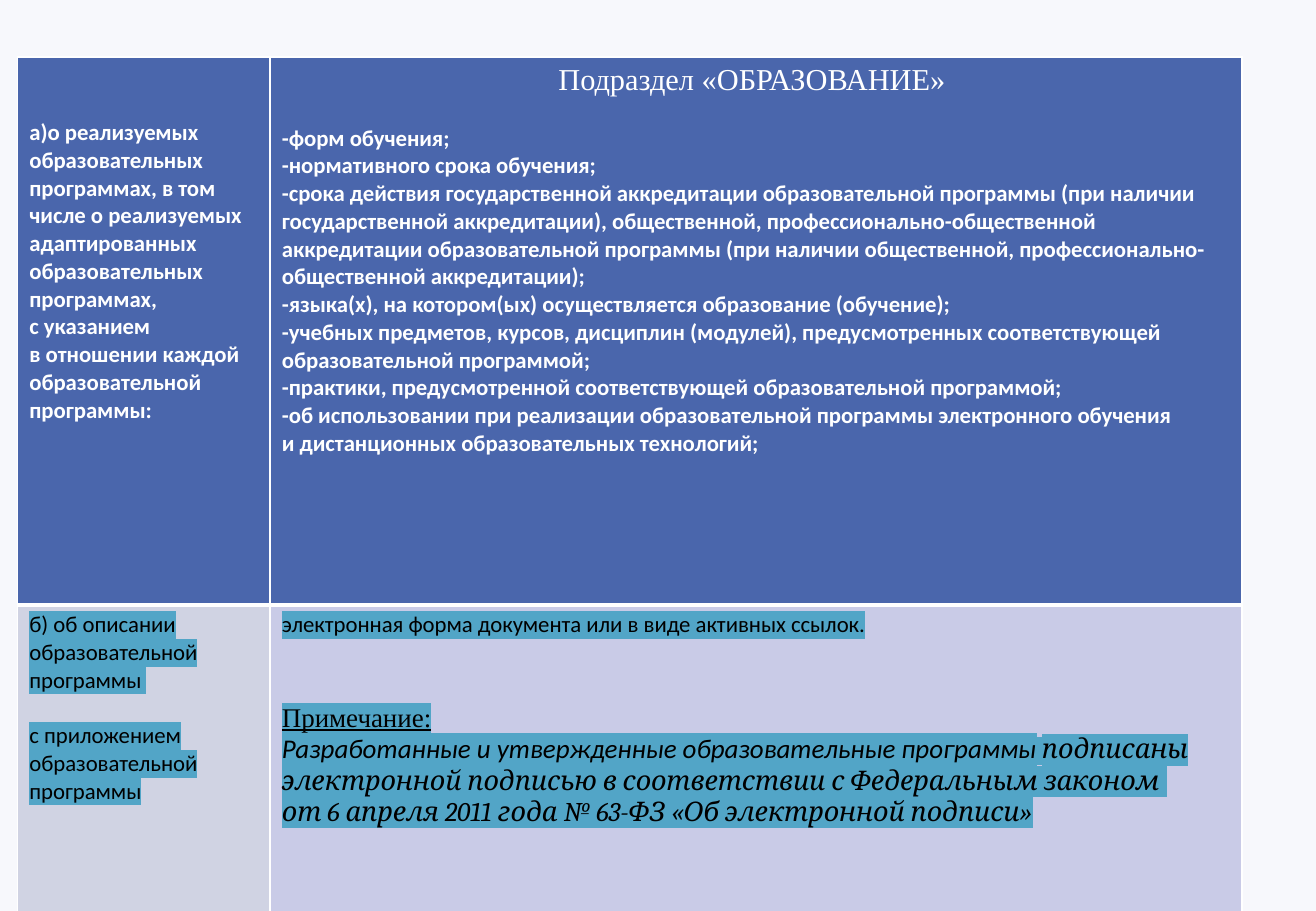
"""Build the slide with the table on the education subsection."""
from copy import deepcopy
from dataclasses import dataclass, field

from lxml import etree
from pptx import Presentation
from pptx import util as u
from pptx.dml import color as dml
from pptx.enum import text as t
from pptx.oxml import ns

WHITE, BLACK, HEADER_BLUE, HIGHLIGHT = "FFFFFF", "000000", "4A66AC", "52A5C7"
COLUMN_WIDTHS = (5.28, 20.32)
ROW_HEIGHTS = (11.46, 7.32)


@dataclass
class Run:
    text: str
    format: dict = field(default_factory=dict)


@dataclass
class Paragraph:
    runs: list[Run]
    space_before: float = 0
    centred: bool = False


@dataclass
class Cell:
    row: int
    column: int
    fill: str
    paragraphs: list[Paragraph]
    text_format: dict
    bottom_border: float = 1
    top_margin: float = 0.13


HEADER_FORMAT = {"color": WHITE, "bold": True}
BODY_FORMAT = {"color": BLACK, "highlight": HIGHLIGHT}

EDUCATION_ITEMS = [
    "-форм обучения;",
    "-нормативного срока обучения;",
    "-срока действия государственной аккредитации образовательной программы (при наличии "
    "государственной аккредитации), общественной, профессионально-общественной аккредитации "
    "образовательной программы (при наличии общественной, профессионально-общественной аккредитации);",
    "-языка(х), на котором(ых) осуществляется образование (обучение);",
    "-учебных предметов, курсов, дисциплин (модулей), предусмотренных соответствующей "
    "образовательной программой;",
    "-практики, предусмотренной соответствующей образовательной программой;",
    "-об использовании при реализации образовательной программы электронного обучения \n"
    "и дистанционных образовательных технологий;",
]

CELLS = [
    Cell(0, 0, HEADER_BLUE, [
        Paragraph([Run("а)о реализуемых образовательных программах, в том числе о реализуемых "
                       "адаптированных образовательных программах, \nс указанием \n"
                       "в отношении каждой образовательной программы:")]),
    ], HEADER_FORMAT, bottom_border=3, top_margin=1.3),
    Cell(0, 1, HEADER_BLUE, [
        Paragraph([Run("Подраздел «ОБРАЗОВАНИЕ» ",
                       {"size": 18, "font": "Times New Roman", "bold": False})], centred=True),
        *(Paragraph([Run(item)], space_before=0 if index else 16.5)
          for index, item in enumerate(EDUCATION_ITEMS)),
    ], HEADER_FORMAT, bottom_border=3),
    Cell(1, 0, "D0D3E3", [
        Paragraph([Run("б) об описании образовательной программы ")]),
        Paragraph([Run("с приложением образовательной программы")], space_before=16.5),
    ], BODY_FORMAT),
    Cell(1, 1, "C9CBE7", [
        Paragraph([Run("электронная форма документа или в виде активных ссылок.")]),
        Paragraph([Run("Примечание:", {"size": 16, "font": "Times New Roman", "underline": True})],
                  space_before=38),
        Paragraph([
            Run("Разработанные и утвержденные образовательные программы", {"size": 16, "italic": True}),
            Run(" "),
            Run("подписаны электронной подписью в соответствии с Федеральным законом \n"
                "от 6 апреля 2011 года № 63-ФЗ «Об электронной подписи»",
                {"size": 16, "font": "Cambria", "italic": True}),
        ]),
    ], BODY_FORMAT),
]


def rgb(value: str) -> dml.RGBColor:
    """Turn a hex string into a colour."""
    return dml.RGBColor.from_string(value)


def add_text(paragraph, text: str, *, size: float = 13.5, font: str = "Calibri", color: str = BLACK,
             bold: bool = False, italic: bool = False, underline: bool = False,
             highlight: str = "") -> None:
    """Append formatted text, turning each newline into a line break."""
    for index, line in enumerate(text.split("\n")):
        if index:
            paragraph.add_line_break()
            line_break = paragraph._p[-1]
        run = paragraph.add_run()
        run.text = line
        run.font.size, run.font.name = u.Pt(size), font
        run.font.bold, run.font.italic, run.font.underline = bold, italic, underline
        run.font.color.rgb = rgb(color)
        properties = run._r.get_or_add_rPr()
        if highlight:
            mark = etree.Element(ns.qn("a:highlight"))
            etree.SubElement(mark, ns.qn("a:srgbClr"), val=highlight)
            properties.find(ns.qn("a:solidFill")).addnext(mark)
        if index:
            line_break.append(deepcopy(properties))


def set_borders(cell, bottom_width: float) -> None:
    """Draw white borders with a chosen width at the bottom."""
    properties = cell._tc.get_or_add_tcPr()
    widths = {"a:lnL": 1, "a:lnR": 1, "a:lnT": 1, "a:lnB": bottom_width}
    for position, (tag, width) in enumerate(widths.items()):
        line = etree.Element(ns.qn(tag), w=str(u.Pt(width)))
        fill = etree.SubElement(line, ns.qn("a:solidFill"))
        etree.SubElement(fill, ns.qn("a:srgbClr"), val=WHITE)
        properties.insert(position, line)


def fill_cell(table, content: Cell) -> None:
    """Write and format one cell of the table."""
    cell = table.cell(content.row, content.column)
    cell.fill.solid()
    cell.fill.fore_color.rgb = rgb(content.fill)
    cell.margin_top = u.Cm(content.top_margin)
    set_borders(cell, content.bottom_border)
    for index, item in enumerate(content.paragraphs):
        paragraph = cell.text_frame.add_paragraph() if index else cell.text_frame.paragraphs[0]
        paragraph.alignment = t.PP_ALIGN.CENTER if item.centred else t.PP_ALIGN.LEFT
        paragraph.space_before = u.Pt(item.space_before)
        for run in item.runs:
            add_text(paragraph, run.text, **(content.text_format | run.format))


def main() -> None:
    """Create the presentation and save it."""
    presentation = Presentation()
    presentation.slide_width, presentation.slide_height = u.Cm(27.51), u.Cm(19.05)
    slide = presentation.slides.add_slide(presentation.slide_layouts[6])
    slide.background.fill.solid()
    slide.background.fill.fore_color.rgb = rgb("F7F8FC")
    table = slide.shapes.add_table(len(ROW_HEIGHTS), len(COLUMN_WIDTHS), u.Cm(0.36), u.Cm(1.19),
                                   u.Cm(sum(COLUMN_WIDTHS)), u.Cm(sum(ROW_HEIGHTS))).table
    table.horz_banding = False
    for column, width in zip(table.columns, COLUMN_WIDTHS):
        column.width = u.Cm(width)
    for row, height in zip(table.rows, ROW_HEIGHTS):
        row.height = u.Cm(height)
    for content in CELLS:
        fill_cell(table, content)
    presentation.save("out.pptx")


if __name__ == "__main__":
    main()
